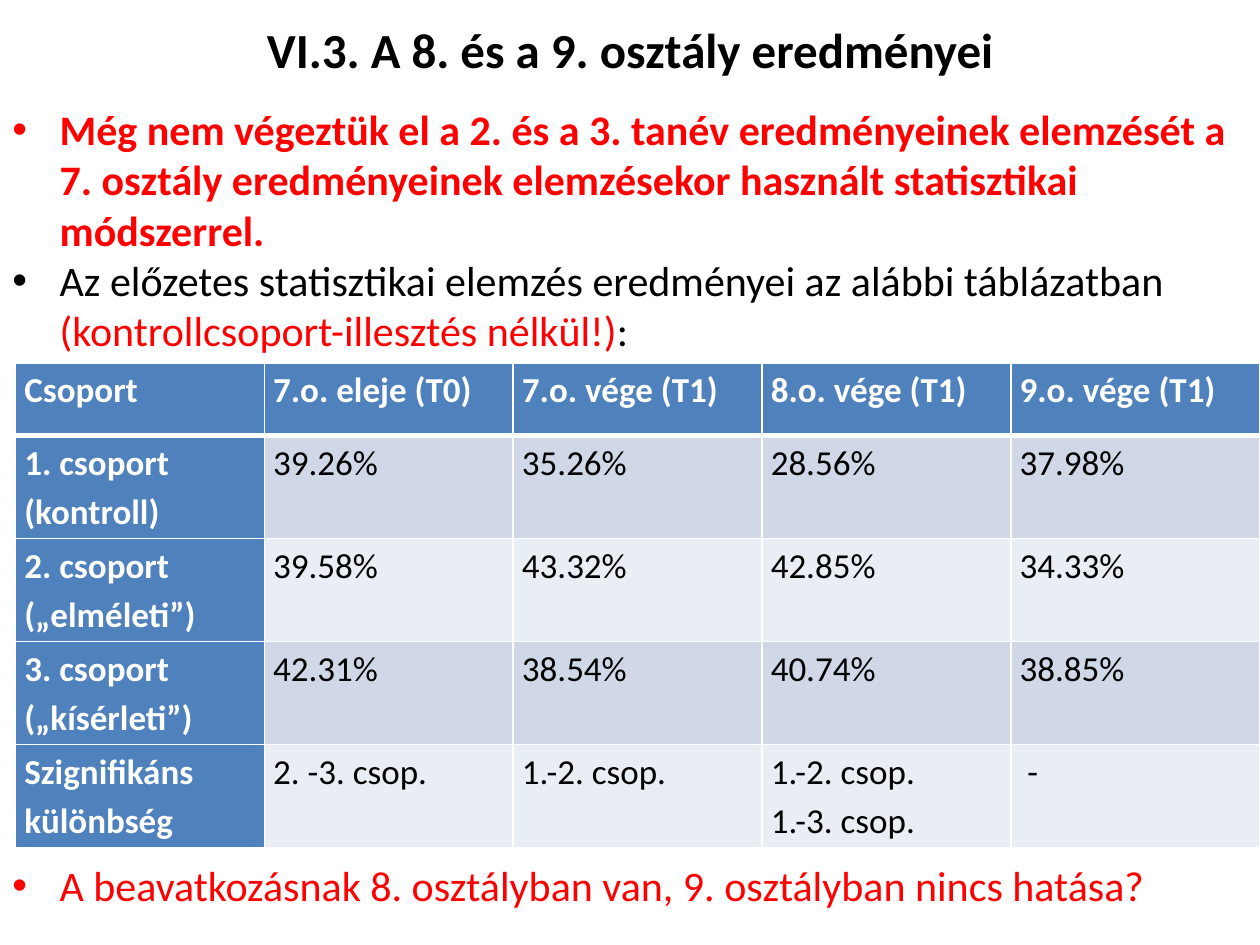
from lxml.etree import SubElement
from pptx import Presentation
from pptx.dml.color import RGBColor
from pptx.enum.text import MSO_ANCHOR, PP_ALIGN
from pptx.oxml.ns import qn
from pptx.util import Pt

# Content
TITLE = "VI.3. A 8. és a 9. osztály eredményei"
HEADER = ["Csoport", "7.o. eleje (T0)", "7.o. vége (T1)", "8.o. vége (T1)", "9.o. vége (T1)"]
RESULTS = [
    ["1. csoport (kontroll)", "39.26%", "35.26%", "28.56%", "37.98%"],
    ["2. csoport („elméleti”)", "39.58%", "43.32%", "42.85%", "34.33%"],
    ["3. csoport („kísérleti”)", "42.31%", "38.54%", "40.74%", "38.85%"],
    ["Szignifikáns különbség", "2. -3. csop.", "1.-2. csop.", "1.-2. csop.\n1.-3. csop.", " -"],
]

# Style
FONT = "Calibri"
BLACK = RGBColor(0, 0, 0)
WHITE = RGBColor(255, 255, 255)
RED = RGBColor(255, 0, 0)
BLUE = RGBColor(0x4F, 0x81, 0xBD)
BANDS = [RGBColor(0xD0, 0xD8, 0xE8), RGBColor(0xE9, 0xED, 0xF4)]

# Each bullet: space before it, then its runs as (text, colour, bold)
LINE = 28.8
TABLE_GAP = 10 * LINE
BULLETS = [
    (0, [("Még nem végeztük el a 2. és a 3. tanév eredményeinek elemzését a 7. osztály "
          "eredményeinek elemzésekor használt statisztikai módszerrel.", RED, True)]),
    (0, [("Az előzetes statisztikai elemzés eredményei az alábbi táblázatban ", BLACK, False),
         ("(kontrollcsoport-illesztés nélkül!)", RED, False),
         (":", BLACK, False)]),
    (TABLE_GAP, [("A beavatkozásnak 8. osztályban van, 9. osztályban nincs hatása?", RED, False)]),
]

# Table grid in points
TABLE_LEFT, TABLE_TOP = 8.9, 207.5
COLUMN_WIDTH = 142.2
ROW_HEIGHTS = [41.5] + [58.8] * len(RESULTS)


def add_span(para, text, size=20, color=BLACK, bold=False):
    span = para.add_run()
    span.text = text
    span.font.name = FONT
    span.font.size = Pt(size)
    span.font.bold = bold
    span.font.color.rgb = color


def add_bullet(para, indent=27):
    props = para._p.get_or_add_pPr()
    props.set("marL", str(Pt(indent)))
    props.set("indent", str(-Pt(indent)))
    SubElement(props, qn("a:buFont")).set("typeface", "Arial")
    SubElement(props, qn("a:buChar")).set("char", "•")


def set_borders(cell, bottom=1):
    props = cell._tc.get_or_add_tcPr()
    widths = {"a:lnL": 1, "a:lnR": 1, "a:lnT": 1, "a:lnB": bottom}
    for position, (side, width) in enumerate(widths.items()):
        line = SubElement(props, qn(side), w=str(Pt(width)))
        fill = SubElement(line, qn("a:solidFill"))
        SubElement(fill, qn("a:srgbClr"), val=str(WHITE))
        props.insert(position, line)


def fill_cell(cell, text, background, color, bold, bottom):
    cell.fill.solid()
    cell.fill.fore_color.rgb = background
    set_borders(cell, bottom)
    cell.margin_left = cell.margin_right = Pt(5)
    cell.margin_top = cell.margin_bottom = 0
    frame = cell.text_frame
    for number, line in enumerate(text.split("\n")):
        para = frame.add_paragraph() if number else frame.paragraphs[0]
        para.line_spacing = 1.15
        add_span(para, line, color=color, bold=bold)


deck = Presentation()
deck.slide_width, deck.slide_height = Pt(720), Pt(540)
page = deck.slides.add_slide(deck.slide_layouts[5])

# Title
title = page.shapes.title
title.left, title.top, title.width, title.height = Pt(36), Pt(0), Pt(648), Pt(55.5)
title.text_frame.vertical_anchor = MSO_ANCHOR.MIDDLE
heading = title.text_frame.paragraphs[0]
heading.alignment = PP_ALIGN.CENTER
add_span(heading, TITLE, size=28, bold=True)

# Bullets above and below the table
box = page.shapes.add_textbox(Pt(0), Pt(55.5), Pt(720), Pt(472))
box.text_frame.word_wrap = True
for number, (gap, spans) in enumerate(BULLETS):
    para = box.text_frame.add_paragraph() if number else box.text_frame.paragraphs[0]
    para.line_spacing = Pt(LINE)
    para.space_before = Pt(gap)
    add_bullet(para)
    for text, color, bold in spans:
        add_span(para, text, size=24, color=color, bold=bold)

# Results table
rows = [HEADER] + RESULTS
table = page.shapes.add_table(len(rows), len(HEADER), Pt(TABLE_LEFT), Pt(TABLE_TOP),
                              Pt(COLUMN_WIDTH * len(HEADER)), Pt(sum(ROW_HEIGHTS))).table
for column in table.columns:
    column.width = Pt(COLUMN_WIDTH)
for r, texts in enumerate(rows):
    table.rows[r].height = Pt(ROW_HEIGHTS[r])
    for c, text in enumerate(texts):
        is_label = r == 0 or c == 0
        fill_cell(table.cell(r, c), text,
                  background=BLUE if is_label else BANDS[(r - 1) % 2],
                  color=WHITE if is_label else BLACK,
                  bold=is_label, bottom=3 if r == 0 else 1)

deck.save("out.pptx")
